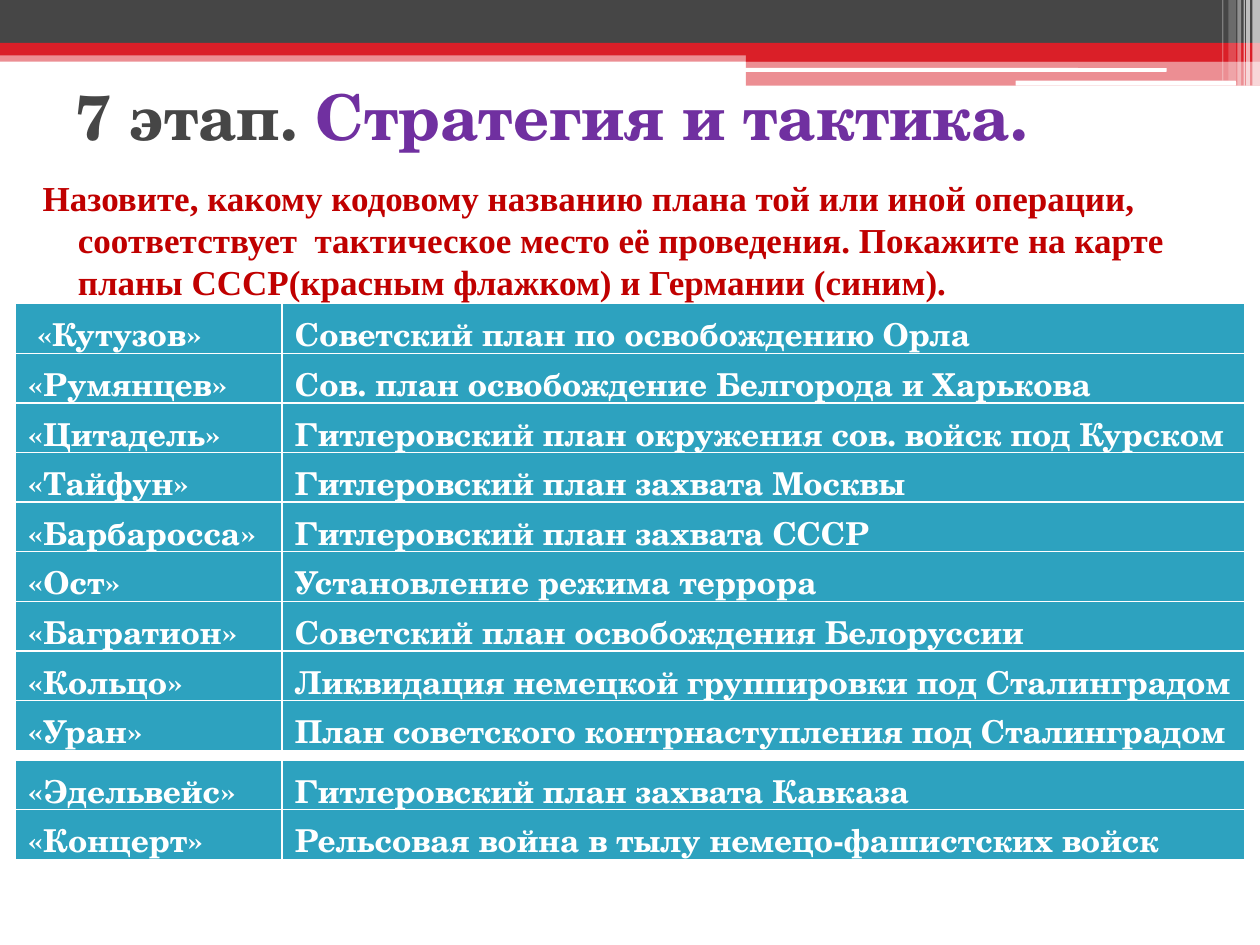
"""Build the slide that matches wartime operation code names with their plans."""
from lxml import etree
from pptx import Presentation
from pptx.dml.color import RGBColor
from pptx.enum.shapes import MSO_SHAPE
from pptx.enum.text import MSO_ANCHOR
from pptx.oxml.ns import qn
from pptx.util import Inches, Pt

RECT, ROUNDED = MSO_SHAPE.RECTANGLE, MSO_SHAPE.ROUNDED_RECTANGLE
MIDDLE = MSO_ANCHOR.MIDDLE
WHITE = RGBColor(0xFF, 0xFF, 0xFF)
RED = RGBColor(0xDA, 0x1F, 0x28)
GRAY = RGBColor(0x46, 0x46, 0x46)
PURPLE = RGBColor(0x70, 0x30, 0xA0)
DARK_RED = RGBColor(0xC0, 0x00, 0x00)
TEAL = RGBColor(0x2D, 0xA2, 0xBF)
SCHOLA, TIMES = "TeX Gyre Schola", "Times New Roman"

WIDTH, HEIGHT = 10, 7.5
BAND_LEFT, BAND_BOTTOM = 5.92, 0.68
MARGIN, NAME_WIDTH = 0.12, 2.12
PLAN_LEFT = MARGIN + NAME_WIDTH
PLAN_WIDTH = WIDTH - MARGIN - PLAN_LEFT
FIRST_ROW, TALL_ROW = 2.41, 5.56
TALL_INDEX, TALL_STEP, ROW_HEIGHT = 8, 0.47, 0.41
ROW_STEP = (TALL_ROW - FIRST_ROW) / TALL_INDEX
BORDERS = {"a:lnL": 1, "a:lnR": 1, "a:lnT": 1, "a:lnB": 3}

HEADER = [
    (RECT, 0, 0.4, WIDTH, 0.09, RED, 50),
    (RECT, 0, 0, WIDTH, 0.34, GRAY, 100),
    (RECT, 0, 0.34, WIDTH, 0.1, RED, 100),
    (RECT, BAND_LEFT, 0.39, WIDTH - BAND_LEFT, 0.1, RED, 100),
    (RECT, BAND_LEFT, 0.48, WIDTH - BAND_LEFT, 0.2, RED, 50),
    (ROUNDED, 5.91, 0.54, 3.35, 0.03, WHITE, 100),
    (ROUNDED, 8.06, 0.64, 1.75, 0.04, WHITE, 100),
    (RECT, 9.94, 0, 0.06, BAND_BOTTOM, WHITE, 65),
    (RECT, 9.89, 0, 0.03, BAND_BOTTOM, WHITE, 65),
    (RECT, 9.87, 0, 0.01, BAND_BOTTOM, WHITE, 60),
    (RECT, 9.82, 0, 0.03, BAND_BOTTOM, WHITE, 40),
    (RECT, 9.75, 0, 0.06, 0.64, WHITE, 20),
    (RECT, 9.7, 0, 0.01, 0.64, WHITE, 30),
]
OPERATIONS = [
    (" «Кутузов»", "Советский план по освобождению Орла"),
    ("«Румянцев»", "Сов. план освобождение Белгорода и Харькова"),
    ("«Цитадель»", "Гитлеровский план окружения сов. войск под Курском"),
    ("«Тайфун»", "Гитлеровский план захвата Москвы"),
    ("«Барбаросса»", "Гитлеровский план захвата СССР"),
    ("«Ост»", "Установление режима террора"),
    ("«Багратион»", "Советский план освобождения Белоруссии"),
    ("«Кольцо»", "Ликвидация немецкой группировки под Сталинградом"),
    ("«Уран»", "План советского контрнаступления под Сталинградом"),
    ("«Эдельвейс»", "Гитлеровский план захвата Кавказа"),
    ("«Концерт»", "Рельсовая война в тылу немецо-фашистских войск"),
]


def set_font(font, name, size, color):
    font.name, font.size, font.bold = name, Pt(size), True
    font.color.rgb = color


def add_entry(shapes, left, top, width, text):
    table = shapes.add_table(1, 1, Inches(left), Inches(top),
                             Inches(width), Inches(ROW_HEIGHT)).table
    table.first_row = table.horz_banding = False
    cell = table.cell(0, 0)
    cell.text = text
    set_font(cell.text_frame.paragraphs[0].font, SCHOLA, 18, WHITE)
    properties = cell._tc.get_or_add_tcPr()
    for side, points in BORDERS.items():
        border = etree.SubElement(properties, qn(side), w=str(Pt(points)))
        paint = etree.SubElement(border, qn("a:solidFill"))
        etree.SubElement(paint, qn("a:srgbClr"), val=str(WHITE))
    cell.fill.solid()
    cell.fill.fore_color.rgb = TEAL


prs = Presentation()
prs.slide_width, prs.slide_height = Inches(WIDTH), Inches(HEIGHT)
slide = prs.slides.add_slide(prs.slide_layouts[6])
shapes = slide.shapes

for kind, left, top, width, height, color, opacity in HEADER:
    stripe = shapes.add_shape(kind, Inches(left), Inches(top), Inches(width), Inches(height))
    stripe.shadow.inherit = False
    stripe.line.fill.background()
    stripe.fill.solid()
    stripe.fill.fore_color.rgb = color
    if opacity < 100:
        tint = stripe.fill._xPr.find(".//" + qn("a:srgbClr"))
        etree.SubElement(tint, qn("a:alpha"), val=str(opacity * 1000))

title = shapes.add_textbox(Inches(0.5), Inches(BAND_BOTTOM), Inches(9), Inches(0.47)).text_frame
title.word_wrap = True
title.vertical_anchor = MIDDLE
for text, color in [("7 этап. ", GRAY), ("Стратегия и тактика.", PURPLE)]:
    run = title.paragraphs[0].add_run()
    run.text = text
    set_font(run.font, SCHOLA, 36, color)

task = shapes.add_textbox(Inches(MARGIN), Inches(1.31),
                          Inches(WIDTH - 2 * MARGIN), Inches(5.98)).text_frame
task.word_wrap = True
task.margin_top = Inches(0.09)
question = task.paragraphs[0]
question.text = ("Назовите, какому кодовому названию плана той или иной операции, "
                 "соответствует  тактическое место её проведения. Покажите на карте "
                 "планы СССР(красным флажком) и Германии (синим).")
indents = question._p.get_or_add_pPr()
indents.set("marL", str(Inches(0.4)))
indents.set("indent", str(Inches(-0.28)))
set_font(question.font, TIMES, 20, DARK_RED)

for index, (name, plan) in enumerate(OPERATIONS):
    extra = TALL_STEP - ROW_STEP if index > TALL_INDEX else 0
    top = FIRST_ROW + index * ROW_STEP + extra
    add_entry(shapes, MARGIN, top, NAME_WIDTH, name)
    add_entry(shapes, PLAN_LEFT, top, PLAN_WIDTH, plan)

prs.save("out.pptx")
